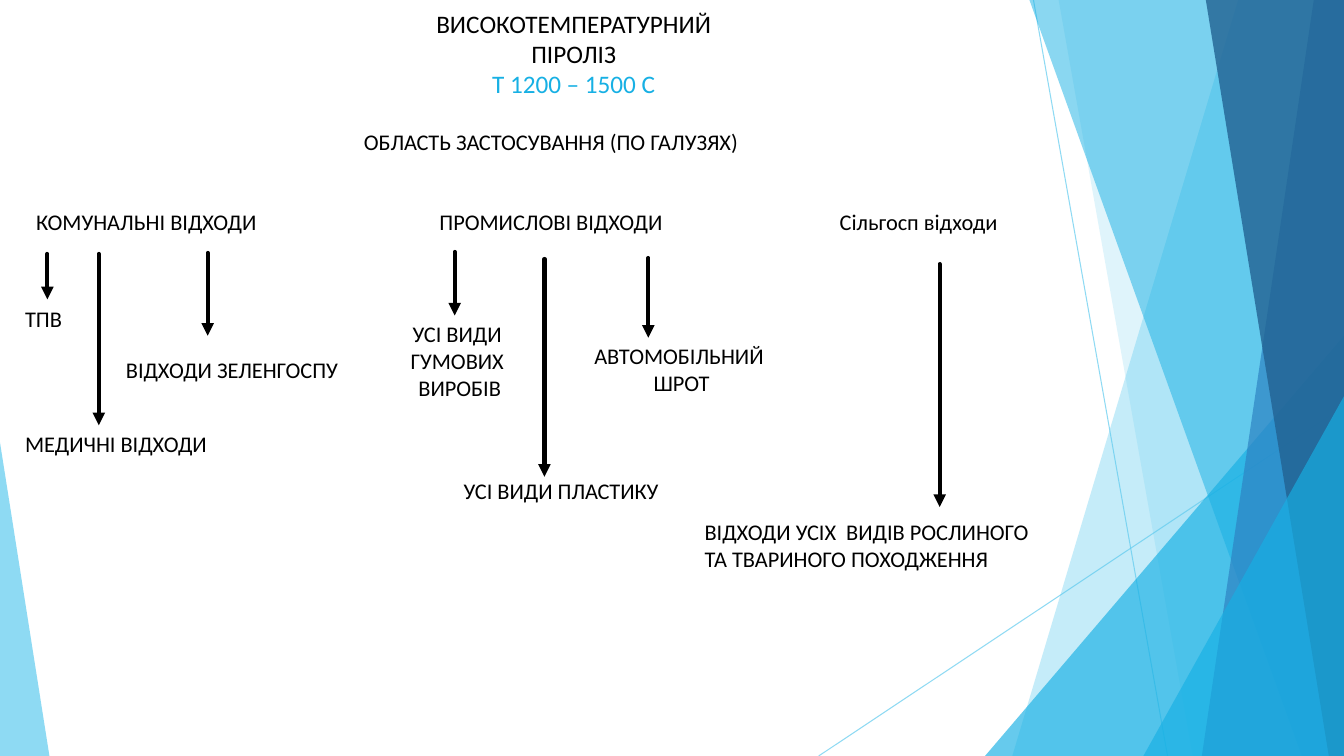
from dataclasses import dataclass

from lxml import etree
from pptx import Presentation
from pptx.dml.color import RGBColor
from pptx.enum.shapes import MSO_CONNECTOR, MSO_SHAPE
from pptx.enum.text import PP_ALIGN
from pptx.oxml.ns import qn
from pptx.util import Inches, Pt

STRAIGHT = MSO_CONNECTOR.STRAIGHT
TRIANGLE = MSO_SHAPE.ISOSCELES_TRIANGLE
LEFT, CENTER = PP_ALIGN.LEFT, PP_ALIGN.CENTER
WIDTH, HEIGHT = 13.33, 7.5


@dataclass(frozen=True)
class Theme:
    font: str = "Calibri"
    title: int = 18
    body: int = 16
    ink: str = "000000"
    sky: str = "5FCBEF"
    accent: str = "17B0E4"
    blue: str = "2E83C3"
    navy: str = "226292"
    hair: float = 0.75
    arrow: float = 3


THEME = Theme()


def paint(fill, color, alpha):
    """Set a solid fill with its opacity in percent."""
    fill.solid()
    fill.fore_color.rgb = RGBColor.from_string(color)
    tint = fill._xPr.find(qn("a:solidFill"))[0]
    etree.SubElement(tint, qn("a:alpha")).set("val", str(alpha * 1000))


def draw_line(slide, start, end, color, width):
    line = slide.shapes.add_connector(
        STRAIGHT, *(Inches(v) for v in (*start, *end)))
    line.line.color.rgb = RGBColor.from_string(color)
    line.line.width = Pt(width)
    etree.SubElement(line._element.spPr, qn("a:effectLst"))
    return line


def add_arrow(slide, x, top, tip):
    line = draw_line(slide, (x, top), (x, tip), THEME.ink, THEME.arrow)
    ln = line.line._get_or_add_ln()
    ln.set("cap", "rnd")
    etree.SubElement(ln, qn("a:tailEnd")).set("type", "triangle")


def add_text(slide, box, text, size=THEME.body, align=LEFT):
    frame = slide.shapes.add_textbox(*(Inches(v) for v in box)).text_frame
    frame.word_wrap = True
    para = frame.paragraphs[0]
    para.text = text
    para.alignment = align
    para.font.name = THEME.font
    para.font.size = Pt(size)
    para.font.color.rgb = RGBColor.from_string(THEME.ink)
    return para


def finish(shape, color, alpha):
    paint(shape.fill, color, alpha)
    shape.line.fill.background()
    shape.shadow.inherit = False


def add_wedge(slide, left, top, width, peak, color, alpha):
    """Add a right triangle standing on the lower slide edge."""
    shape = slide.shapes.add_shape(
        TRIANGLE, Inches(left), Inches(top),
        Inches(width), Inches(HEIGHT - top))
    shape.adjustments[0] = peak
    finish(shape, color, alpha)


def add_band(slide, top, foot, color, alpha):
    """Add a full-height band from a slanted left edge to the right edge."""
    pen = slide.shapes.build_freeform(Inches(top), 0)
    pen.add_line_segments([
        (Inches(x), Inches(y))
        for x, y in ((WIDTH, 0), (WIDTH, HEIGHT), (foot, HEIGHT))])
    finish(pen.convert_to_shape(), color, alpha)


def add_backdrop(slide):
    for start, end in (((10.25, 0), (11.58, HEIGHT)),
                       ((WIDTH, 4.03), (8.12, HEIGHT))):
        line = draw_line(slide, start, end, THEME.sky, THEME.hair)
        paint(line.line.fill, THEME.sky, 70)
    add_band(slide, 12.28, 10.04, THEME.sky, 36)
    add_band(slide, 10.5, 11.83, THEME.sky, 20)
    add_wedge(slide, 9.77, 3.33, 3.56, 1, THEME.accent, 66)
    add_band(slide, 10.21, 12.91, THEME.accent, 50)
    add_band(slide, 13.03, 11.92, THEME.blue, 70)
    add_band(slide, 11.96, 13.18, THEME.navy, 80)
    add_wedge(slide, 11.34, 3.93, 1.99, 1, THEME.accent, 66)
    add_wedge(slide, 0, 4.39, 0.49, 0, THEME.sky, 70)


def add_title(slide, box):
    left, top, width, height = box
    para = add_text(slide, box, "ВИСОКОТЕМПЕРАТУРНИЙ ПІРОЛІЗ\n",
                    THEME.title, CENTER)
    run = para.add_run()
    run.text = "T 1200 – 1500 С"
    run.font.color.rgb = RGBColor.from_string(THEME.accent)
    add_text(slide, (left - 0.57, top + 1.19, 6.51, 0.37),
             "ОБЛАСТЬ ЗАСТОСУВАННЯ (ПО ГАЛУЗЯХ)")


def add_branch(slide, box, head, leaves):
    """Place a heading and its arrows and leaves, offset from the box corner."""
    left, top, width, height = box
    add_text(slide, box, head)
    for text, align, (dx, dy, wide, high), (x, start, tip) in leaves:
        add_text(slide, (left + dx, top + dy, wide, high), text, align=align)
        add_arrow(slide, left + x, top + start, top + tip)


BRANCHES = (
    ((0.26, 2.02, 2.61, 0.37), "КОМУНАЛЬНІ ВІДХОДИ", (
        ("ТПВ", LEFT, (-0.11, 0.96, 0.61, 0.37), (0.21, 0.5, 0.95)),
        ("ВІДХОДИ ЗЕЛЕНГОСПУ", LEFT,
         (0.89, 1.46, 2.59, 0.37), (1.8, 0.49, 1.31)),
        ("МЕДИЧНІ ВІДХОДИ", LEFT,
         (-0.11, 2.2, 2.17, 0.37), (0.72, 0.5, 2.2)))),
    ((4.26, 2.02, 2.61, 0.37), "ПРОМИСЛОВІ ВІДХОДИ", (
        ("УСІ ВИДИ \nГУМОВИХ \nВИРОБІВ", CENTER,
         (-0.32, 1.11, 1.24, 0.91), (0.25, 0.48, 1.11)),
        ("АВТОМОБІЛЬНИЙ \nШРОТ", CENTER,
         (1.46, 1.33, 2.08, 0.64), (2.17, 0.54, 1.33)),
        ("УСІ ВИДИ ПЛАСТИКУ", LEFT,
         (0.24, 2.66, 2.38, 0.64), (1.14, 0.55, 2.71)))),
    ((8.23, 2.02, 1.97, 0.37), "Сільгосп відходи", (
        ("ВІДХОДИ УСІХ  ВИДІВ РОСЛИНОГО \nТА ТВАРИНОГО ПОХОДЖЕННЯ", LEFT,
         (-1.34, 3.07, 3.77, 0.64), (1.09, 0.6, 3.01)),)),
)


def main():
    deck = Presentation()
    deck.slide_width, deck.slide_height = Inches(WIDTH), Inches(HEIGHT)
    slide = deck.slides.add_slide(deck.slide_layouts[6])
    add_backdrop(slide)
    add_title(slide, (4.08, 0.03, 3.22, 1.01))
    for box, head, leaves in BRANCHES:
        add_branch(slide, box, head, leaves)
    deck.save("out.pptx")


if __name__ == "__main__":
    main()
